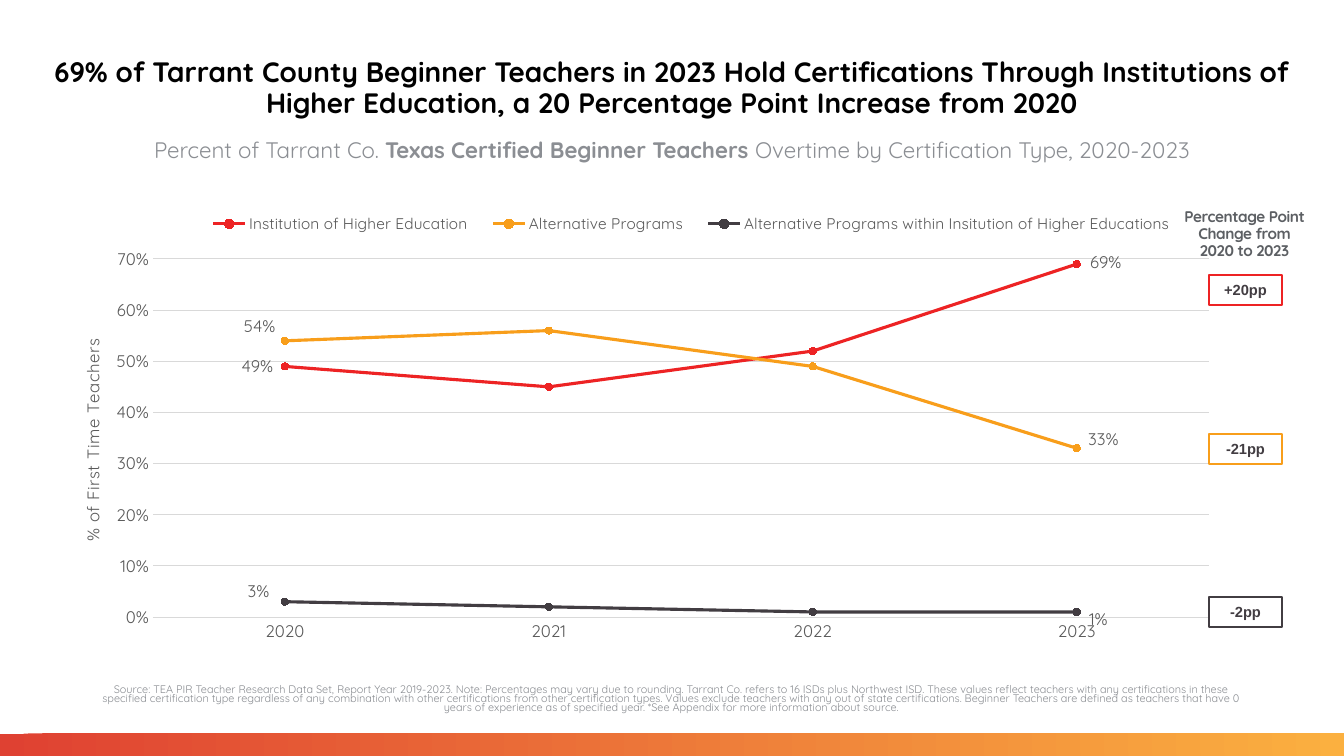
from dataclasses import dataclass

from lxml import etree
from pptx import Presentation
from pptx.chart import data as chart_data
from pptx.dml import color
from pptx.enum import chart as charts, shapes, text
from pptx.oxml import ns
from pptx.util import Pt

EMU_PER_PX = 914400 / 100.8
CHART_BOX = (66, 193, 1159, 475)
C15 = "http://schemas.microsoft.com/office/drawing/2012/chart"


@dataclass(frozen=True)
class Theme:
    font: str = "Quicksand"
    badge_font: str = "Arial"
    black: str = "000000"
    muted: str = "8B8E93"
    heading: str = "5C5F63"
    axis: str = "595959"
    grid: str = "D9D9D9"
    red: str = "ED2324"
    orange: str = "F89E1B"
    dark: str = "423D42"
    bar_start: str = "DF4132"
    bar_end: str = "FBB040"
    title_size: float = 20
    subtitle_size: float = 16
    axis_size: float = 12
    legend_size: float = 11
    badge_size: float = 10.5
    source_size: float = 7.8


THEME = Theme()

# name, colour, yearly shares, label shift in px for the first and last point
SERIES = [
    ("Institution of Higher Education", THEME.red,
     (0.49, 0.45, 0.52, 0.69), {0: (-4, 0), 3: (6, -2)}),
    ("Alternative Programs", THEME.orange,
     (0.54, 0.56, 0.49, 0.33), {0: (-2, -15), 3: (4, -9)}),
    ("Alternative Programs within Insitution of Higher Educations", THEME.dark,
     (0.03, 0.02, 0.01, 0.01), {0: (-8, -11), 3: (5, 7)}),
]

BADGES = [("+20pp", THEME.red, 275), ("-21pp", THEME.orange, 434), ("-2pp", THEME.dark, 597)]

SOURCE = (
    "Source: TEA PIR Teacher Research Data Set, Report Year 2019-2023. Note: Percentages may vary "
    "due to rounding. Tarrant Co. refers to 16 ISDs plus Northwest ISD. These values reflect "
    "teachers with any certifications in these specified certification type regardless of any "
    "combination with other certifications from other certification types. Values exclude teachers "
    "with any out of state certifications. Beginner Teachers are defined as teachers that have 0 "
    "years of experience as of specified year. *See Appendix for more information about source."
)


def px(length):
    return round(length * EMU_PER_PX)


def rgb(value):
    return color.RGBColor.from_string(value)


def style(font, size, fill, name=THEME.font, bold=False):
    font.size, font.name, font.bold = Pt(size), name, bold
    font.color.rgb = rgb(fill)


def write(para, words, size, fill, name=THEME.font, bold=False, tracking=0):
    """Add one span; tracking is in hundredths of a point."""
    span = para.add_run()
    span.text = words
    style(span.font, size, fill, name, bold)
    if tracking:
        span.font._element.set("spc", str(tracking))


def centred_para(shape, inset=(10, 5), anchor=text.MSO_ANCHOR.TOP, spacing=1.0):
    frame = shape.text_frame
    frame.word_wrap = True
    frame.vertical_anchor = anchor
    frame.margin_left = frame.margin_right = px(inset[0])
    frame.margin_top = frame.margin_bottom = px(inset[1])
    para = frame.paragraphs[0]
    para.alignment = text.PP_ALIGN.CENTER
    para.line_spacing = spacing
    return para


def text_para(page, box, **layout):
    return centred_para(page.shapes.add_textbox(*map(px, box)), **layout)


def rectangle(page, box):
    shape = page.shapes.add_shape(shapes.MSO_SHAPE.RECTANGLE, *map(px, box))
    shape.shadow.inherit = False
    return shape


def gradient_bar(page):
    bar = rectangle(page, (0, 734, 1344, 22))
    bar.line.fill.background()
    bar.fill.gradient()
    bar.fill.gradient_angle = 1
    for stop, place, fill in zip(bar.fill.gradient_stops, (0, 1), (THEME.bar_start, THEME.bar_end)):
        stop.position = place
        stop.color.rgb = rgb(fill)


def badge(page, words, outline, top):
    shape = rectangle(page, (1209, top, 73, 30))
    shape.fill.background()
    shape.line.color.rgb = rgb(outline)
    shape.line.width = Pt(1.5)
    para = centred_para(shape, inset=(6, 6), anchor=text.MSO_ANCHOR.MIDDLE)
    write(para, words, THEME.badge_size, THEME.dark, THEME.badge_font, bold=True)


def place(before, **values):
    """Put a manual chart layout straight after the given element."""
    for old in before.getparent().findall(ns.qn("c:layout")):
        before.getparent().remove(old)
    layout = etree.Element(ns.qn("c:layout"))
    manual = etree.SubElement(layout, ns.qn("c:manualLayout"))
    for key, value in values.items():
        etree.SubElement(manual, ns.qn(f"c:{key}")).set("val", str(value))
    before.addnext(layout)


def style_axes(chart):
    years, shares = chart.category_axis, chart.value_axis
    for axis in (years, shares):
        axis.major_tick_mark = axis.minor_tick_mark = charts.XL_TICK_MARK.NONE
        style(axis.tick_labels.font, THEME.axis_size, THEME.axis)
    shares.minimum_scale, shares.maximum_scale, shares.major_unit = 0, 0.7, 0.1
    shares.tick_labels.number_format = "0%"
    shares.tick_labels.number_format_is_linked = False
    shares.has_major_gridlines = True
    for line in (years.format.line, shares.major_gridlines.format.line):
        line.color.rgb = rgb(THEME.grid)
        line.width = Pt(0.75)
    shares.format.line.fill.background()
    title = shares.axis_title
    write(title.text_frame.paragraphs[0], "% of First Time Teachers",
          THEME.axis_size, THEME.axis, tracking=40)
    place(title._element.find(ns.qn("c:tx")), xMode="edge", yMode="edge", x=0.01, y=0.3)


def label_points(series, shifts):
    labels = series.data_labels
    labels.show_value = False
    for index, (across, down) in shifts.items():
        label = series.points[index].data_label
        style(label.font, THEME.axis_size, THEME.axis)
        position = charts.XL_LABEL_POSITION
        label.position = position.RIGHT if index else position.LEFT
        mark = labels._element.xpath(f"c:dLbl/c:idx[@val='{index}']")[0]
        place(mark, x=round(across / CHART_BOX[2], 4), y=round(down / CHART_BOX[3], 4))
    extensions = etree.SubElement(labels._element, ns.qn("c:extLst"))
    extension = etree.SubElement(extensions, ns.qn("c:ext"), nsmap={"c15": C15})
    extension.set("uri", "{CE6537A1-D6FC-4f65-9D91-7224C49458BB}")
    etree.SubElement(extension, f"{{{C15}}}showLeaderLines").set("val", "1")


def style_series(series, fill):
    series.smooth = False
    series.format.line.color.rgb = rgb(fill)
    series.format.line.width = Pt(2.25)
    series.marker.style = charts.XL_MARKER_STYLE.CIRCLE
    series.marker.size = 5
    series.marker.format.fill.solid()
    series.marker.format.fill.fore_color.rgb = rgb(fill)
    series.marker.format.line.color.rgb = rgb(fill)


def certification_chart(page):
    table = chart_data.CategoryChartData(number_format="0%")
    table.categories = ["2020", "2021", "2022", "2023"]
    for name, _, shares, _ in SERIES:
        table.add_series(name, shares)
    chart = page.shapes.add_chart(charts.XL_CHART_TYPE.LINE_MARKERS, *map(px, CHART_BOX), table).chart
    chart.has_title = False
    style(chart.font, 10, THEME.black)
    chart.plots[0].vary_by_categories = False
    style_axes(chart)
    for series, (_, fill, _, shifts) in zip(chart.plots[0].series, SERIES):
        style_series(series, fill)
        label_points(series, shifts)
    chart.has_legend = True
    chart.legend.position = charts.XL_LEGEND_POSITION.BOTTOM
    chart.legend.include_in_layout = False
    style(chart.legend.font, THEME.legend_size, THEME.axis)
    edges = {"xMode": "edge", "yMode": "edge"}
    place(chart.legend._element.find(ns.qn("c:legendPos")), **edges, x=0.11, y=0.04, w=0.86, h=0.05)
    area = chart._chartSpace.find(f".//{ns.qn('c:plotArea')}")
    if area.find(ns.qn("c:layout")) is None:
        area.insert(0, etree.Element(ns.qn("c:layout")))
    anchor = etree.Element("anchor")
    area.insert(0, anchor)
    place(anchor, layoutTarget="inner", **edges, x=0.075, y=0.139, w=0.911, h=0.754)
    area.remove(anchor)


def main():
    deck = Presentation()
    deck.slide_width, deck.slide_height = px(1344), px(756)
    page = deck.slides.add_slide(deck.slide_layouts[6])
    gradient_bar(page)
    subtitle = text_para(page, (65, 134, 1214, 47), spacing=0.9)
    for words, bold in (("Percent of Tarrant Co. ", False), ("Texas Certified Beginner Teachers ", True),
                        ("Overtime by Certification Type, 2020-2023", False)):
        write(subtitle, words, THEME.subtitle_size, THEME.muted, bold=bold)
    title = text_para(page, (0, 55, 1344, 68), anchor=text.MSO_ANCHOR.MIDDLE, spacing=0.9)
    write(title, "69% of Tarrant County Beginner Teachers in 2023 Hold Certifications Through Institutions "
          "of Higher Education, a 20 Percentage Point Increase from 2020",
          THEME.title_size, THEME.black, bold=True)
    certification_chart(page)
    write(text_para(page, (92, 681, 1159, 56), spacing=0.7), SOURCE, THEME.source_size, THEME.muted)
    heading = text_para(page, (1176, 204, 137, 61), inset=(6, 6), anchor=text.MSO_ANCHOR.MIDDLE, spacing=0.9)
    write(heading, "Percentage Point Change from 2020 to 2023",
          THEME.legend_size, THEME.heading, bold=True, tracking=-30)
    for words, outline, top in BADGES:
        badge(page, words, outline, top)
    deck.save("out.pptx")


if __name__ == "__main__":
    main()
